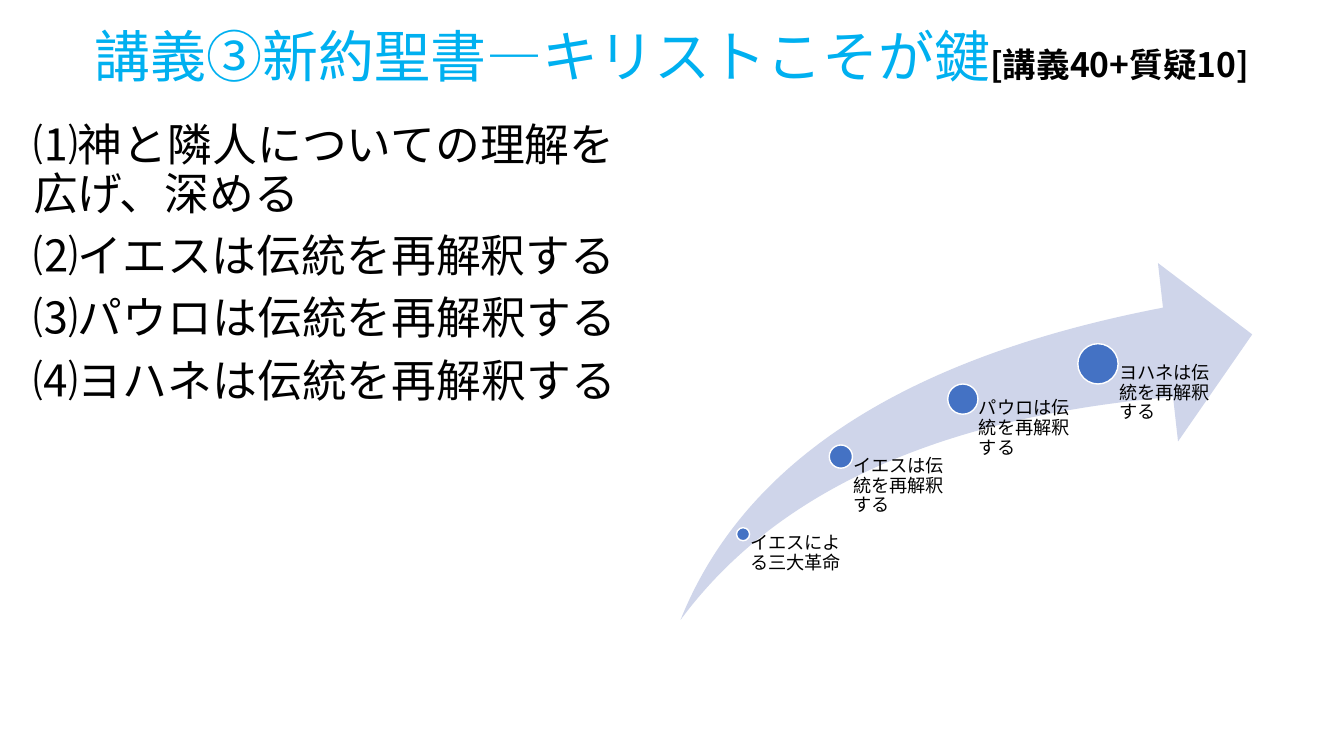
from lxml.etree import SubElement
from pptx import Presentation
from pptx.dml.color import RGBColor
from pptx.enum.shapes import MSO_SHAPE
from pptx.enum.text import MSO_ANCHOR, PP_ALIGN
from pptx.oxml.ns import qn
from pptx.util import Inches, Pt

FONT = "Noto Sans CJK JP"
TITLE_RUNS = [
    ("講義③新約聖書―キリストこそが鍵", 40, "00B0F0", False),
    ("[講義40+質疑10]", 24, "000000", True),
]
TOPICS = [
    "⑴神と隣人についての理解を広げ、深める",
    "⑵イエスは伝統を再解釈する",
    "⑶パウロは伝統を再解釈する",
    "⑷ヨハネは伝統を再解釈する",
]
MILESTONES = [
    ("イエスによる三大革命", 7.37, 5.3, 0.13, 0.98),
    ("イエスは伝統を再解釈する", 8.34, 4.53, 0.23, 1.19),
    ("パウロは伝統を再解釈する", 9.55, 3.96, 0.3, 1.19),
    ("ヨハネは伝統を再解釈する", 10.89, 3.61, 0.4, 1.19),
]
ARROW = (6.75, 2.61, 5.67, 3.54)
ARROW_BOTTOM = ARROW[1] + ARROW[3]


def color(value):
    return RGBColor.from_string(value)


def add_run(paragraph, text, size, fill="000000", bold=False):
    run = paragraph.add_run()
    run.text = text
    run.font.size = Pt(size)
    run.font.bold = bold
    run.font.color.rgb = color(fill)
    run.font.name = FONT
    SubElement(run.font._element, qn("a:ea"), typeface=FONT)


def add_text(slide, box, texts, size, space_before=0):
    shape = slide.shapes.add_textbox(*map(Inches, box))
    frame = shape.text_frame
    frame.word_wrap = True
    for index, text in enumerate(texts):
        paragraph = frame.add_paragraph() if index else frame.paragraphs[0]
        paragraph.line_spacing = 0.9
        paragraph.space_before = Pt(space_before)
        add_run(paragraph, text, size)
    return frame


def add_shape(slide, kind, box, fill):
    shape = slide.shapes.add_shape(kind, *map(Inches, box))
    shape.shadow.inherit = False
    shape.fill.solid()
    shape.fill.fore_color.rgb = color(fill)
    shape.line.fill.background()
    return shape


def add_title(slide):
    title = slide.shapes.title
    title.left, title.top, title.width, title.height = map(Inches, (0.23, 0, 12.87, 1.17))
    title.text_frame.vertical_anchor = MSO_ANCHOR.MIDDLE
    paragraph = title.text_frame.paragraphs[0]
    paragraph.alignment = PP_ALIGN.CENTER
    paragraph.line_spacing = 0.9
    for text, size, fill, bold in TITLE_RUNS:
        add_run(paragraph, text, size, fill, bold)


def add_milestone(slide, text, center_x, center_y, diameter, width):
    radius = diameter / 2
    dot = add_shape(slide, MSO_SHAPE.OVAL,
                    (center_x - radius, center_y - radius, diameter, diameter), "4472C4")
    dot.line.color.rgb = color("FFFFFF")
    dot.line.width = Pt(1)
    frame = add_text(slide, (center_x, center_y, width, ARROW_BOTTOM - center_y), [text], 13)
    frame.margin_left = Inches(diameter * 0.53)
    frame.margin_top = frame.margin_right = frame.margin_bottom = 0


def main():
    presentation = Presentation()
    presentation.slide_width = Inches(13.33)
    presentation.slide_height = Inches(7.5)
    slide = presentation.slides.add_slide(presentation.slide_layouts[5])
    add_title(slide)
    add_text(slide, (0.23, 1.17, 6.35, 6), TOPICS, 32, 10)
    arrow = add_shape(slide, MSO_SHAPE.SWOOSH_ARROW, ARROW, "CFD5EA")
    arrow.adjustments[0] = 0.25
    arrow.adjustments[1] = 0.25
    for milestone in MILESTONES:
        add_milestone(slide, *milestone)
    presentation.save("out.pptx")


if __name__ == "__main__":
    main()
